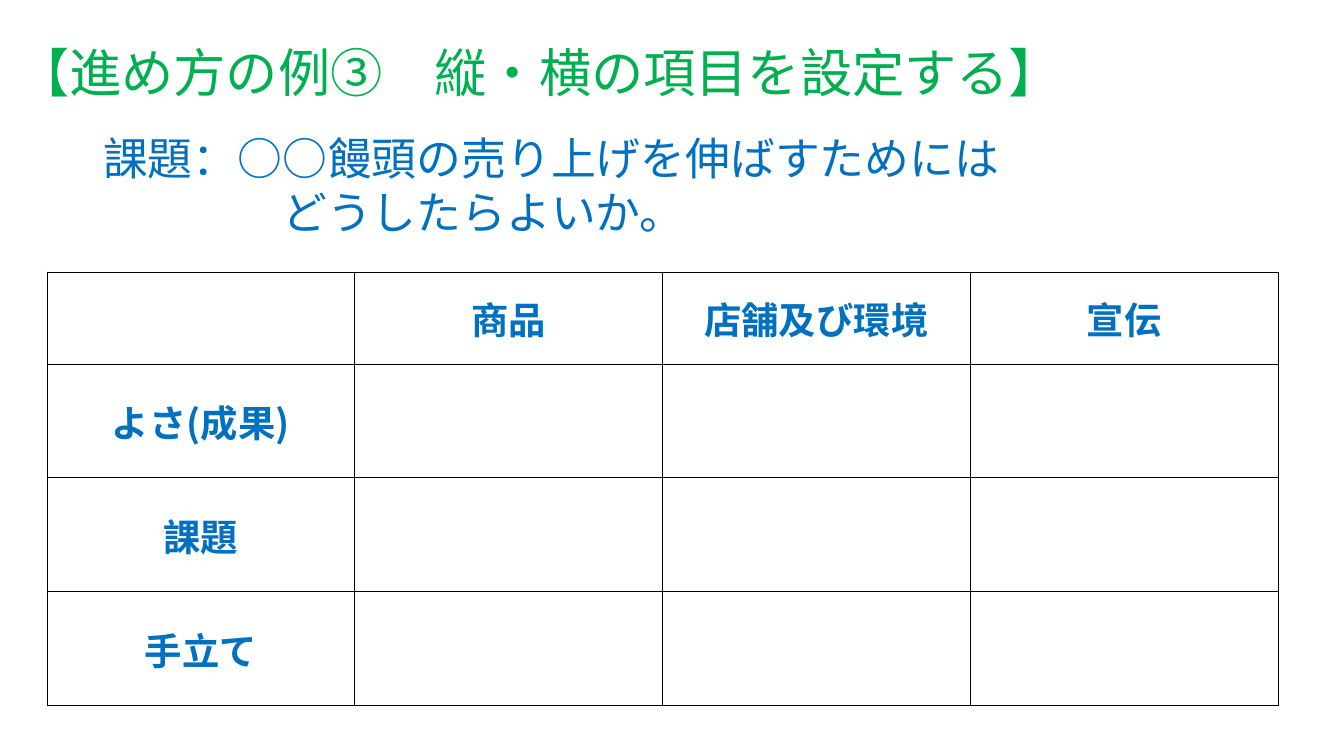
import pptx
import pptx.util
import pptx.dml.color
import pptx.enum.text
import pptx.oxml
import pptx.oxml.ns
import lxml.etree

PX = 914400 / 134.4
CJK = "Noto Sans CJK JP"
GREEN, BLUE, BLACK = "00B050", "0070C0", "000000"
MIDDLE = pptx.enum.text.MSO_ANCHOR.MIDDLE
CENTER = pptx.enum.text.PP_ALIGN.CENTER


def px(n):
    return pptx.util.Emu(round(n * PX))


def color(hex_text):
    return pptx.dml.color.RGBColor.from_string(hex_text)


def add_child(parent, tag, **attrs):
    return lxml.etree.SubElement(parent, pptx.oxml.ns.qn(tag), **attrs)


def write(p, text, size, fill, font, bold=False):
    p.text = text
    for r in p.runs:
        r.font.size = pptx.util.Pt(size)
        r.font.bold = bold
        r.font.name = font
        r.font.color.rgb = color(fill)
        add_child(r._r.get_or_add_rPr(), "a:ea", typeface=CJK)


def text_box(s, x, y, w, h):
    tf = s.shapes.add_textbox(px(x), px(y), px(w), px(h)).text_frame
    tf.word_wrap = True
    tf.vertical_anchor = MIDDLE
    return tf


def add_heading(s, x, y, w, h):
    tf = text_box(s, x, y, w, h)
    write(tf.paragraphs[0], "【進め方の例③　縦・横の項目を設定する】", 28, GREEN, "Arial")


def add_question(s, x, y, w, h):
    tf = text_box(s, x, y, w, h)
    first, second = tf.paragraphs[0], tf.add_paragraph()
    write(first, "課題：○○饅頭の売り上げを伸ばすためには", 24, BLUE, CJK)
    write(second, "どうしたらよいか。", 24, BLUE, CJK)
    for p in (first, second):
        p.line_spacing = pptx.util.Pt(29)
    # The second line starts four characters in
    second._p.get_or_add_pPr().set("marL", str(pptx.util.Pt(4 * 24)))


def style_cell(cell):
    cell.vertical_anchor = MIDDLE
    cell.margin_left = cell.margin_right = cell.margin_top = px(1)
    cell.margin_bottom = 0
    tcPr = cell._tc.get_or_add_tcPr()
    for side in ("a:lnL", "a:lnR", "a:lnT", "a:lnB"):
        ln = add_child(tcPr, side, w=str(pptx.util.Pt(0.5)))
        add_child(add_child(ln, "a:solidFill"), "a:srgbClr", val=BLACK)
    cell.fill.background()


def add_matrix(s, x, y, w, head_h, row_h):
    columns = ["商品", "店舗及び環境", "宣伝"]
    rows = ["よさ(成果)", "課題", "手立て"]
    n_rows, n_cols = len(rows) + 1, len(columns) + 1
    h = head_h + row_h * len(rows)
    table = s.shapes.add_table(n_rows, n_cols, px(x), px(y), px(w), px(h)).table
    table.first_row = table.horz_banding = False
    for col in table.columns:
        col.width = px(w / n_cols)
    for i, row in enumerate(table.rows):
        row.height = px(row_h if i else head_h)
    for cell in table.iter_cells():
        style_cell(cell)

    # Labels along the top and the left side
    labels = [(0, j, text) for j, text in enumerate(columns, 1)]
    labels += [(i, 0, text) for i, text in enumerate(rows, 1)]
    for i, j, text in labels:
        p = table.cell(i, j).text_frame.paragraphs[0]
        p.alignment = CENTER
        write(p, text, 20, BLUE, CJK, bold=True)


def main():
    prs = pptx.Presentation()
    prs.slide_width, prs.slide_height = px(1344), px(756)
    s = prs.slides.add_slide(prs.slide_layouts[6])
    add_heading(s, 4, 9, 1238, 126)
    add_matrix(s, 47, 272, 1231, 92, 114)
    add_question(s, 90, 132, 1030, 104)
    prs.save("out.pptx")


if __name__ == "__main__":
    main()
